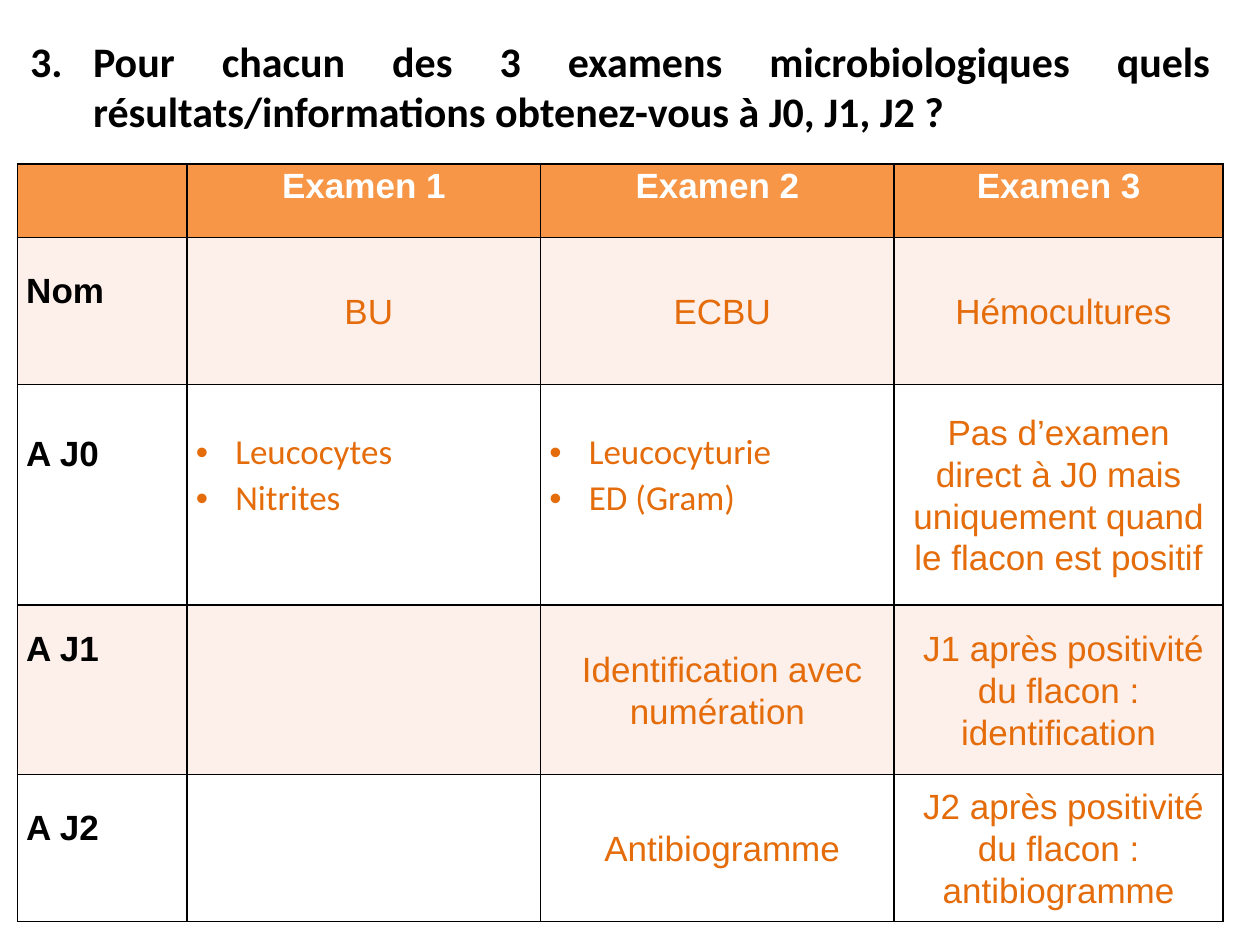
"""Build a slide with a table of microbiological results by day."""
import lxml.etree
import pptx
import pptx.dml.color
import pptx.enum.text
import pptx.oxml.ns
import pptx.util

Pt = pptx.util.Pt
qn = pptx.oxml.ns.qn
ALIGN = pptx.enum.text.PP_ALIGN
ANCHOR = pptx.enum.text.MSO_ANCHOR

COLORS = {
    "black": "000000",
    "white": "FFFFFF",
    "header": "F79646",
    "band": "FDEFE9",
    "answer": "E46C0A",
}
TITLE = ("Pour chacun des 3 examens microbiologiques quels "
         "résultats/informations obtenez-vous à J0, J1, J2 ?")
ROWS = [
    ["", "Examen 1", "Examen 2", "Examen 3"],
    ["Nom", "BU", "ECBU", "Hémocultures"],
    ["A J0", ["Leucocytes", "Nitrites"], ["Leucocyturie", "ED (Gram)"],
     "Pas d’examen direct à J0 mais uniquement quand le flacon est positif"],
    ["A J1", "", "Identification avec numération",
     "J1 après positivité du flacon : identification"],
    ["A J2", "", "Antibiogramme",
     "J2 après positivité du flacon : antibiogramme"],
]
COLUMN_WIDTHS = [97, 202, 202, 188]
ROW_HEIGHTS = [42, 84, 126, 97, 84]
LABEL_BOTTOM_MARGINS = [0, 24, 48, 48, 24]


class SlideBuilder:
    """Hold the style and the current slide."""

    def __init__(self, presentation):
        self.slide = presentation.slides.add_slide(presentation.slide_layouts[5])

    def color(self, name):
        return pptx.dml.color.RGBColor.from_string(COLORS[name])

    def format_runs(self, paragraph, font, size, color, bold=False):
        for run in paragraph.runs:
            run.font.name = font
            run.font.size = Pt(size)
            run.font.bold = bold
            run.font.color.rgb = self.color(color)

    def mark(self, paragraph, indent, tag, **attributes):
        properties = paragraph._p.get_or_add_pPr()
        properties.set("marL", str(Pt(indent)))
        properties.set("indent", str(-Pt(indent)))
        if tag == "a:buChar":
            lxml.etree.SubElement(properties, qn("a:buFont"), typeface="Arial")
        lxml.etree.SubElement(properties, qn(tag), **attributes)

    def title(self, text, left, top, width, height):
        shape = self.slide.shapes.title
        shape.left, shape.top = Pt(left), Pt(top)
        shape.width, shape.height = Pt(width), Pt(height)
        frame = shape.text_frame
        frame.text = text
        frame.word_wrap = True
        frame.auto_size = pptx.enum.text.MSO_AUTO_SIZE.NONE
        frame.vertical_anchor = ANCHOR.TOP
        paragraph = frame.paragraphs[0]
        self.mark(paragraph, 36, "a:buAutoNum", type="arabicPeriod", startAt="3")
        paragraph.alignment = ALIGN.JUSTIFY
        paragraph.space_before = Pt(0)
        self.format_runs(paragraph, "Calibri", 24, "black", True)

    def borders(self, cell):
        properties = cell._tc.get_or_add_tcPr()
        for side in ("a:lnL", "a:lnR", "a:lnT", "a:lnB"):
            line = lxml.etree.SubElement(properties, qn(side), w=str(Pt(1)))
            fill = lxml.etree.SubElement(line, qn("a:solidFill"))
            lxml.etree.SubElement(fill, qn("a:srgbClr"), val=COLORS["black"])

    def cell(self, cell, content, row, column):
        is_list = isinstance(content, list)
        is_header, is_label = row == 0, column == 0
        self.borders(cell)
        cell.fill.solid()
        fill = "header" if is_header else "band" if row % 2 else "white"
        cell.fill.fore_color.rgb = self.color(fill)
        cell.margin_left = cell.margin_right = Pt(5)
        cell.margin_top = Pt(25 if is_list else 0)
        cell.margin_bottom = Pt(LABEL_BOTTOM_MARGINS[row] if is_label else 0)
        cell.vertical_anchor = ANCHOR.TOP if is_header or is_list else ANCHOR.MIDDLE
        cell.text_frame.text = "\n".join(content) if is_list else content
        color = "white" if is_header else "black" if is_label else "answer"
        for paragraph in cell.text_frame.paragraphs:
            if is_list:
                self.mark(paragraph, 22.5, "a:buChar", char="•")
            elif not is_label:
                paragraph.alignment = ALIGN.CENTER
                if row not in (0, 2):
                    paragraph._p.get_or_add_pPr().set("indent", str(Pt(5.5)))
            paragraph.line_spacing = 1.07
            self.format_runs(paragraph, "Calibri" if is_list else "Arial", 20,
                             color, is_header or is_label)

    def table(self, rows, left, top):
        frame = self.slide.shapes.add_table(
            len(rows), len(rows[0]), Pt(left), Pt(top),
            Pt(sum(COLUMN_WIDTHS)), Pt(sum(ROW_HEIGHTS)))
        table = frame.table
        for column, width in zip(table.columns, COLUMN_WIDTHS):
            column.width = Pt(width)
        for row, height in zip(table.rows, ROW_HEIGHTS):
            row.height = Pt(height)
        for row, contents in enumerate(rows):
            for column, content in enumerate(contents):
                self.cell(table.cell(row, column), content, row, column)


def main():
    presentation = pptx.Presentation()
    presentation.slide_width, presentation.slide_height = Pt(720), Pt(540)
    builder = SlideBuilder(presentation)
    builder.title(TITLE, 10, 16.5, 689, 91)
    builder.table(ROWS, 10, 93.75)
    presentation.save("out.pptx")


if __name__ == "__main__":
    main()
